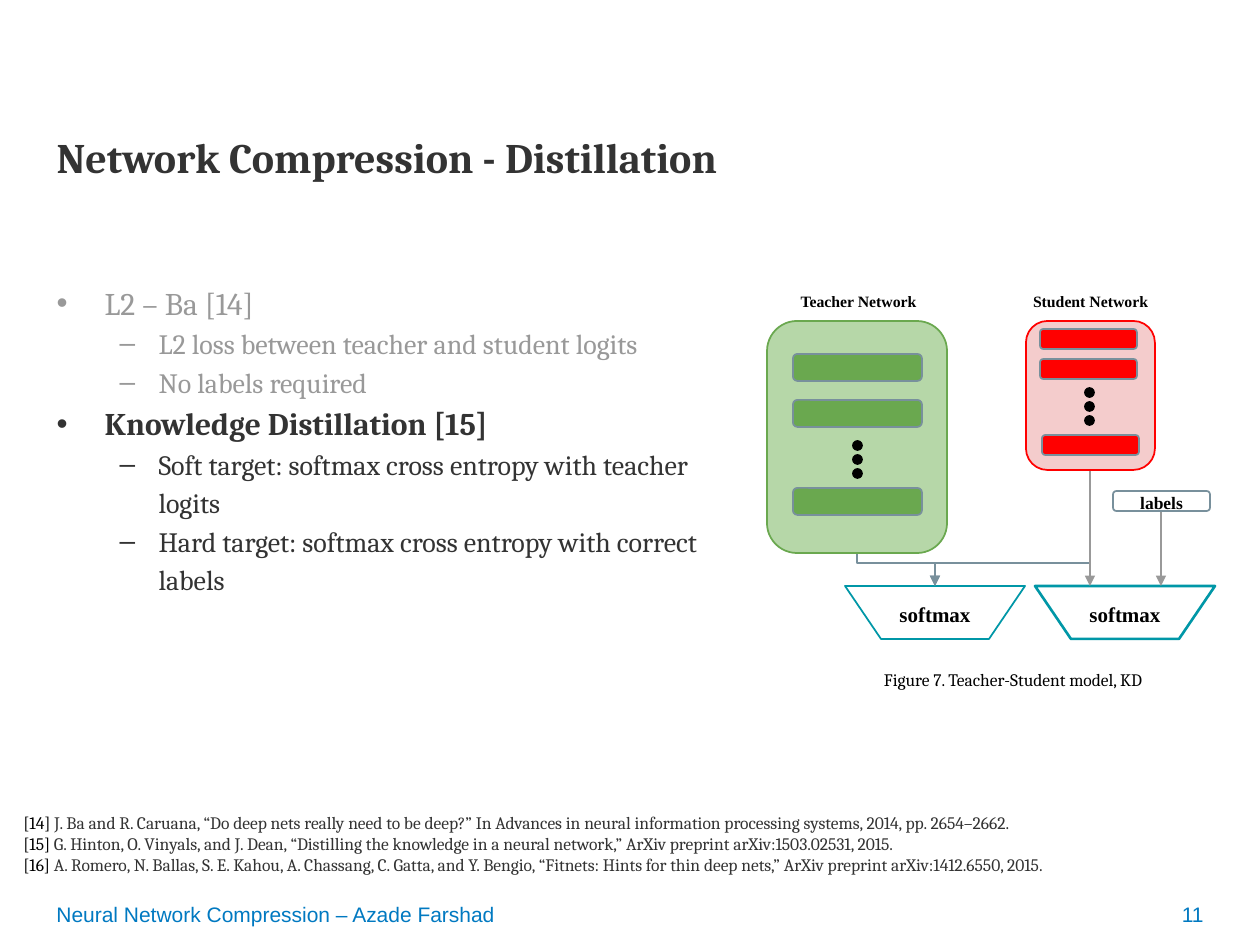
from lxml import etree
from pptx import Presentation, util as u
from pptx.dml.color import RGBColor
from pptx.enum import shapes, text
from pptx.oxml.ns import qn

PX = 914400 / 126
HEX = {
    "ink": "333333", "mute": "999999", "black": "000000", "white": "FFFFFF",
    "blue": "0079C1", "teal": "0097A7", "slate": "78909C",
    "green": "6AA84F", "mint": "B6D7A8", "red": "FF0000", "pink": "F4CCCC",
}
KIND = shapes.MSO_SHAPE
WIRE = shapes.MSO_CONNECTOR
TOP, MID = text.MSO_ANCHOR.TOP, text.MSO_ANCHOR.MIDDLE
LEFT, MIDDLE, RIGHT = text.PP_ALIGN.LEFT, text.PP_ALIGN.CENTER, text.PP_ALIGN.RIGHT
SERIF, TIMES, SANS = "Cambria", "Times New Roman", "Arial"

POINTS = [
    (0, "L2 – Ba [14]", "mute", False),
    (1, "L2 loss between teacher and student logits", "mute", False),
    (1, "No labels required", "mute", False),
    (0, "Knowledge Distillation [15]", "ink", True),
    (1, "Soft target: softmax cross entropy with teacher logits", "ink", False),
    (1, "Hard target: softmax cross entropy with correct labels", "ink", False),
]
# Per list level: bullet, font size, left margin and hanging indent
LEVELS = [("•", 18, 48, -48), ("–", 16, 102, -39)]
REFS = [
    ("[14] ", "J. Ba and R. Caruana, “Do deep nets really need to be deep?” In Advances in "
     "neural information processing systems, 2014, pp. 2654–2662."),
    ("[15] ", "G. Hinton, O. Vinyals, and J. Dean, “Distilling the knowledge in a neural "
     "network,” ArXiv preprint arXiv:1503.02531, 2015."),
    ("[16] ", "A. Romero, N. Ballas, S. E. Kahou, A. Chassang, C. Gatta, and Y. Bengio, "
     "“Fitnets: Hints for thin deep nets,” ArXiv preprint arXiv:1412.6550, 2015."),
]


def px(n):
    return u.Emu(round(n * PX))


def tint(name):
    return RGBColor.from_string(HEX[name])


def add_run(para, words, size, face, hue, bold=False):
    run = para.add_run()
    run.text = words
    font = run.font
    font.size, font.name, font.bold = u.Pt(size), face, bold
    font.color.rgb = tint(hue)


def place(shape, box):
    shape.left, shape.top, shape.width, shape.height = map(px, box)


def set_frame(frame, anchor, inset=6):
    frame.word_wrap = True
    frame.auto_size = text.MSO_AUTO_SIZE.NONE
    frame.vertical_anchor = anchor
    frame.margin_top = frame.margin_bottom = px(inset)


def add_text(slide, box, lines, size, face, align=LEFT, anchor=TOP, inset=6, bold=False, gap=1):
    """Each line is a list of (words, colour) runs."""
    frame = slide.shapes.add_textbox(*map(px, box)).text_frame
    set_frame(frame, anchor, inset)
    for i, line in enumerate(lines):
        para = frame.add_paragraph() if i else frame.paragraphs[0]
        para.alignment, para.line_spacing = align, gap
        for words, hue in line:
            add_run(para, words, size, face, hue, bold)


def add_shape(slide, kind, box, fill, line, width=1, label="", size=12):
    shape = slide.shapes.add_shape(kind, *map(px, box))
    shape.shadow.inherit = False
    shape.fill.solid()
    shape.fill.fore_color.rgb = tint(fill)
    shape.line.color.rgb = tint(line)
    shape.line.width = u.Pt(width)
    if label:
        set_frame(shape.text_frame, MID)
        para = shape.text_frame.paragraphs[0]
        para.alignment, para.line_spacing = MIDDLE, 1.1
        add_run(para, label, size, TIMES, "black", True)


def add_wire(slide, kind, start, end, hue, width):
    wire = slide.shapes.add_connector(kind, *map(px, start + end))
    wire.line.color.rgb = tint(hue)
    wire.line.width = u.Pt(width)
    line = wire.line._get_or_add_ln()
    etree.SubElement(line, qn("a:tailEnd"), type="triangle")
    etree.SubElement(wire._element.spPr, qn("a:effectLst"))
    return wire


def add_elbow(slide, start, end, bend):
    """Leave downwards, cross at the height bend, and arrive downwards."""
    (x1, y1), (x2, y2) = start, end
    wide, high = abs(x2 - x1), y2 - y1
    left, top = (x1 + x2 - high) / 2, (y1 + y2 - wide) / 2
    wire = add_wire(slide, WIRE.ELBOW, (left, top), (left + high, top + wide), "slate", 1)
    props = wire._element.spPr
    frame = props.find(qn("a:xfrm"))
    frame.set("rot", "5400000")
    if x2 > x1:
        frame.set("flipV", "1")
    guides = props.find(qn("a:prstGeom")).get_or_add_avLst()
    ratio = round((bend - y1) / high * 100000)
    etree.SubElement(guides, qn("a:gd"), name="adj1", fmla=f"val {ratio}")


def add_net(slide, box, fill, hue, bars, size, dots):
    add_shape(slide, KIND.ROUNDED_RECTANGLE, box, fill, hue)
    for spot in bars:
        add_shape(slide, KIND.ROUNDED_RECTANGLE, spot + size, hue, "slate")
    x, y = dots
    for i in range(3):
        add_shape(slide, KIND.OVAL, (x, y + 14 * i, 9, 9), "black", "black")


def fill_title(title):
    place(title, (44, 125, 1171, 120))
    set_frame(title.text_frame, TOP)
    para = title.text_frame.paragraphs[0]
    para.alignment = LEFT
    add_run(para, "Network Compression - Distillation", 24, SERIF, "ink", True)


def fill_list(body):
    place(body, (44, 265, 702, 596))
    frame = body.text_frame
    set_frame(frame, TOP)
    frame.margin_top = px(13)
    for i, (level, words, hue, bold) in enumerate(POINTS):
        mark, size, left, hang = LEVELS[level]
        para = frame.add_paragraph() if i else frame.paragraphs[0]
        para.level, para.line_spacing = level, 1.15
        para.space_before = u.Pt(0)
        props = para._p.get_or_add_pPr()
        props.set("marL", str(px(left)))
        props.set("indent", str(px(hang)))
        shade = etree.SubElement(props, qn("a:buClr"))
        etree.SubElement(shade, qn("a:srgbClr"), val=HEX[hue])
        etree.SubElement(props, qn("a:buFont"), typeface=SANS)
        etree.SubElement(props, qn("a:buChar"), char=mark)
        add_run(para, words, size, SERIF, hue, bold)


def draw_model(slide):
    for x, width in ((845, 1), (1035, 1.5)):
        add_shape(slide, KIND.FLOWCHART_MANUAL_OPERATION, (x, 586, 180, 53),
                  "white", "teal", width, "softmax")
    for start in ((857, 553), (1090, 470)):
        add_elbow(slide, start, (935, 586), 563)
    for x, y in ((1090, 470), (1161, 512)):
        add_wire(slide, WIRE.STRAIGHT, (x, y), (x, 586), "mute", 1.5)
    add_shape(slide, KIND.ROUNDED_RECTANGLE, (1113, 491, 97, 20),
              "white", "slate", 1, "labels", 10)
    for x, name in ((781, "Teacher Network"), (1013, "Student Network")):
        add_text(slide, (x, 284, 155, 37), [[(name, "black")]], 9, TIMES,
                 MIDDLE, bold=True, gap=1.1)
    add_net(slide, (767, 321, 180, 232), "mint", "green",
            [(793, 354), (793, 400), (793, 488)], (129, 27), (853, 441))
    add_net(slide, (1026, 321, 129, 149), "pink", "red",
            [(1040, 329), (1040, 359), (1042, 435)], (97, 20), (1085, 388))
    add_text(slide, (813, 660, 400, 19), [[("Figure 7. Teacher-Student model, KD", "black")]],
             10, SERIF, MIDDLE, inset=13)


def main():
    deck = Presentation()
    deck.slide_width, deck.slide_height = px(1260), px(945)
    slide = deck.slides.add_slide(deck.slide_layouts[1])
    fill_title(slide.shapes.title)
    fill_list(slide.placeholders[1])
    draw_model(slide)
    add_text(slide, (11, 799, 1236, 49),
             [[(mark, "black"), (cite, "ink")] for mark, cite in REFS], 10, SERIF, inset=13)
    add_text(slide, (44, 893, 863, 42), [[("Neural Network Compression – Azade Farshad", "blue")]],
             12, SANS, anchor=MID)
    add_text(slide, (1137, 893, 79, 42), [[("11", "blue")]], 12, SANS, RIGHT, MID)
    deck.save("out.pptx")


if __name__ == "__main__":
    main()
